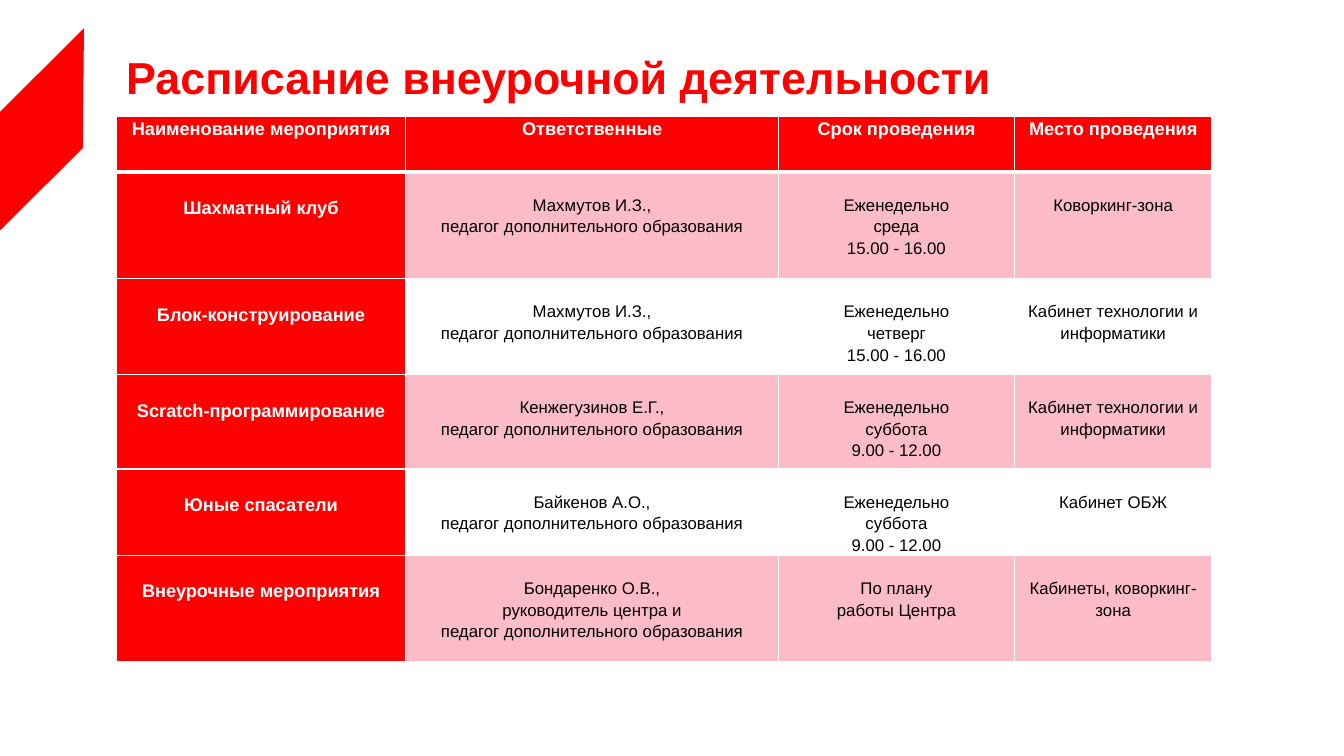
from lxml import etree
from pptx import Presentation
from pptx.dml.color import RGBColor
from pptx.enum.text import PP_ALIGN
from pptx.oxml.ns import qn
from pptx.util import Inches, Pt

CENTER = PP_ALIGN.CENTER
COLORS = {"red": "FF0000", "pink": "FCBCC7", "white": "FFFFFF", "black": "000000"}

TEACHER = "педагог дополнительного образования"
WEEKLY = "Еженедельно"
TECH_ROOM = "Кабинет технологии и информатики"
HEADINGS = ["Наименование мероприятия", "Ответственные", "Срок проведения", "Место проведения"]
ACTIVITIES = [
    ["Шахматный клуб", f"Махмутов И.З.,\n{TEACHER}",
     f"{WEEKLY}\nсреда\n15.00 - 16.00", "Коворкинг-зона"],
    ["Блок-конструирование", f"Махмутов И.З.,\n{TEACHER}",
     f"{WEEKLY}\nчетверг\n15.00 - 16.00", TECH_ROOM],
    ["Scratch-программирование", f"Кенжегузинов Е.Г.,\n{TEACHER}",
     f"{WEEKLY}\nсуббота\n9.00 - 12.00", TECH_ROOM],
    ["Юные спасатели", f"Байкенов А.О.,\n{TEACHER}",
     f"{WEEKLY}\nсуббота\n9.00 - 12.00", "Кабинет ОБЖ"],
    ["Внеурочные мероприятия", f"Бондаренко О.В.,\nруководитель центра и\n{TEACHER}",
     "По плану\nработы Центра", "Кабинеты, коворкинг-зона"],
]


def rgb(name):
    return RGBColor.from_string(COLORS[name])


class ScheduleSlide:
    """Holds the style and the slide; lengths are percentages of the slide's size."""

    font_name = "Arial"
    line_spacing = 1.15
    side_margin = Inches(0.07)

    def __init__(self, deck):
        self.width, self.height = deck.slide_width, deck.slide_height
        self.slide = deck.slides.add_slide(deck.slide_layouts[6])

    def x(self, share):
        return round(self.width * share / 100)

    def y(self, share):
        return round(self.height * share / 100)

    def add_run(self, paragraph, text, size, color, bold):
        run = paragraph.add_run()
        run.text = text
        font = run.font
        font.name, font.size, font.bold = self.font_name, Pt(size), bold
        font.color.rgb = rgb(color)

    def band(self, corners, color):
        start, *others = [(self.x(x), self.y(y)) for x, y in corners]
        builder = self.slide.shapes.build_freeform(*start)
        builder.add_line_segments(others, close=True)
        band = builder.convert_to_shape()
        band.shadow.inherit = False
        band.fill.solid()
        band.fill.fore_color.rgb = rgb(color)
        band.line.fill.background()

    def title(self, text, left, top, width, height):
        box = self.slide.shapes.add_textbox(
            self.x(left), self.y(top), self.x(width), self.y(height))
        box.text_frame.word_wrap = True
        self.add_run(box.text_frame.paragraphs[0], text, 32, "red", True)

    def border(self, cell, side, points):
        line = etree.SubElement(cell._tc.get_or_add_tcPr(), qn(f"a:ln{side}"), w=str(Pt(points)))
        fill = etree.SubElement(line, qn("a:solidFill"))
        etree.SubElement(fill, qn("a:srgbClr"), val=COLORS["white"])

    def cell(self, cell, text, row, column):
        is_header, is_label = row == 0, row == 0 or column == 0
        for side in "LRTB":
            thick = (is_header and side == "B") or (row == 1 and side == "T")
            self.border(cell, side, 3 if thick else 1)
        cell.fill.solid()
        cell.fill.fore_color.rgb = rgb("red" if is_label else "pink" if row % 2 else "white")
        cell.margin_left = cell.margin_right = self.side_margin
        cell.margin_top = 0 if is_header else Inches(0.23 if is_label else 0.21)
        cell.margin_bottom = 0
        for index, line in enumerate(text.split("\n")):
            frame = cell.text_frame
            paragraph = frame.add_paragraph() if index else frame.paragraphs[0]
            paragraph.alignment = CENTER
            paragraph.line_spacing = self.line_spacing
            self.add_run(paragraph, line, 13 if is_label else 12,
                         "white" if is_label else "black", is_label)

    def table(self, rows, left, top, widths, heights):
        table = self.slide.shapes.add_table(
            len(rows), len(widths), self.x(left), self.y(top),
            self.x(sum(widths)), self.y(sum(heights))).table
        table.horz_banding = False
        for column, width in zip(table.columns, widths):
            column.width = self.x(width)
        for row, height in zip(table.rows, heights):
            row.height = self.y(height)
        for r, texts in enumerate(rows):
            for c, text in enumerate(texts):
                self.cell(table.cell(r, c), text, r, c)


def main():
    deck = Presentation()
    deck.slide_width, deck.slide_height = Inches(13.33), Inches(7.5)
    schedule = ScheduleSlide(deck)
    schedule.band([(0, 30.5), (0, 14.8), (6.25, 3.75), (6.17, 19.6)], "red")
    schedule.table([HEADINGS] + ACTIVITIES, 8.65, 15.4,
                   widths=[21.53, 27.75, 17.55, 14.7],
                   heights=[7.33, 14.13, 12.67, 12.53, 11.33, 14.13])
    schedule.title("Расписание внеурочной деятельности", 8.65, 5.87, 77.4, 8.53)
    deck.save("out.pptx")


if __name__ == "__main__":
    main()
